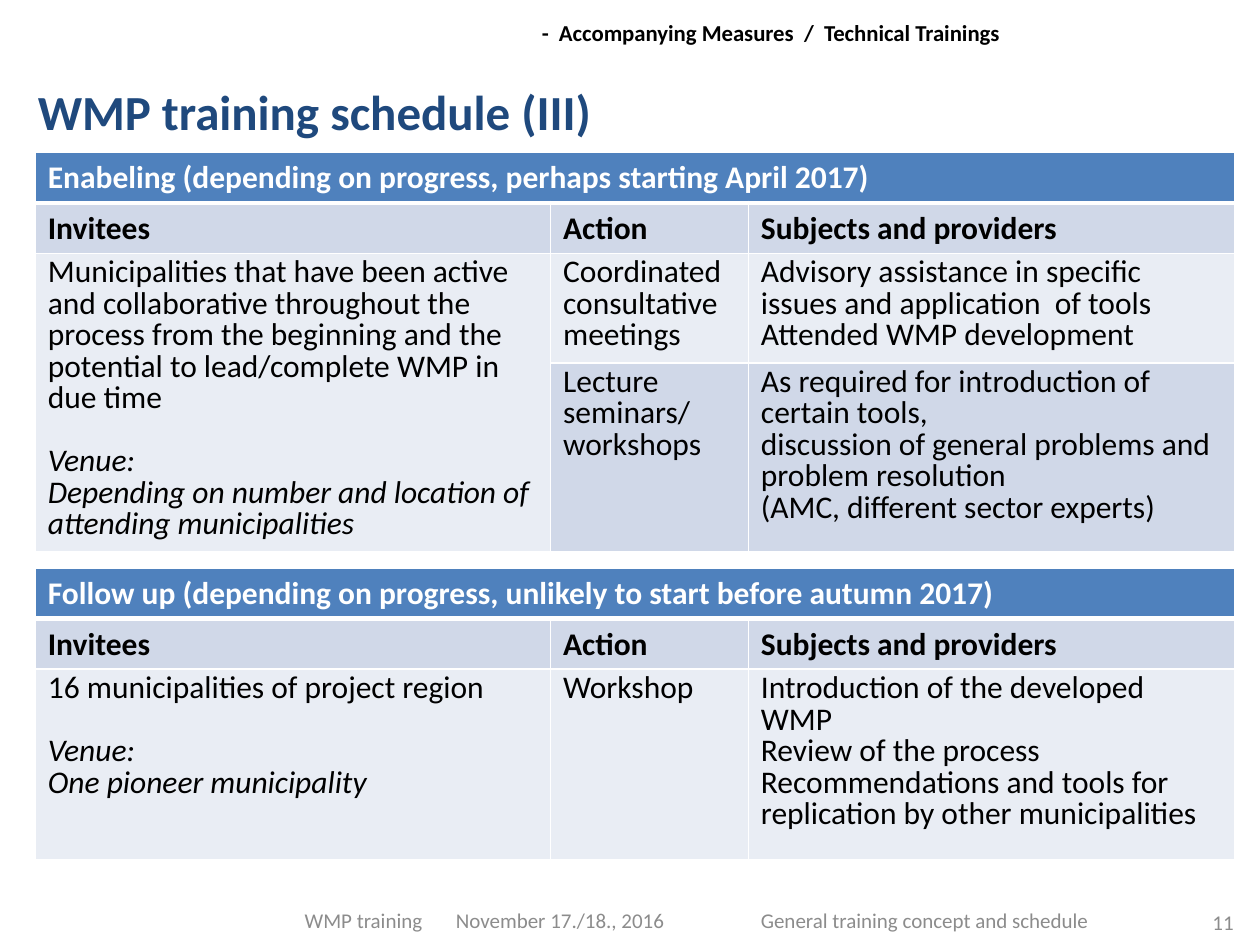
from pptx import Presentation
from pptx.dml.color import RGBColor
from pptx.enum.shapes import MSO_SHAPE
from pptx.enum.text import MSO_ANCHOR, MSO_AUTO_SIZE, PP_ALIGN
from pptx.oxml.ns import qn
from pptx.util import Inches, Pt
from lxml.etree import SubElement

WHITE = RGBColor(0xFF, 0xFF, 0xFF)
BLACK = RGBColor(0, 0, 0)
NAVY = RGBColor(0x1F, 0x49, 0x7D)
BLUE = RGBColor(0x4F, 0x81, 0xBD)
BAND_DARK = RGBColor(0xD0, 0xD8, 0xE8)
BAND_LIGHT = RGBColor(0xE9, 0xED, 0xF4)
GREY = RGBColor(0x8C, 0x8C, 0x8C)
FONT = "Calibri"

SECTION = "-  Accompanying Measures  /  Technical Trainings"
TITLE = "WMP training schedule (III)"
VENUE = "Venue:"
COLUMN_HEADS = ["Invitees", "Action", "Subjects and providers"]

# Each body cell is a list of paragraphs; those from VENUE on are italic.
ENABLING = {
    "heading": "Enabeling (depending on progress, perhaps starting April 2017)",
    "top": 1.21,
    "row_heights": [0.4, 0.4, 0.87, 1.5],
    "body": [
        [["Municipalities that have been active and collaborative throughout the process "
          "from the beginning and the potential to lead/complete WMP in due time",
          VENUE, "Depending on number and location of attending municipalities"],
         ["Coordinated consultative meetings"],
         ["Advisory assistance in specific issues and application  of tools",
          "Attended WMP development"]],
        [[],
         ["Lecture seminars/\vworkshops"],
         ["As required for introduction of certain tools,",
          "discussion of general problems and problem resolution",
          "(AMC, different sector experts)"]],
    ],
}
FOLLOW_UP = {
    "heading": "Follow up (depending on progress, unlikely to start before autumn 2017)",
    "top": 4.51,
    "row_heights": [0.4, 0.4, 1.51],
    "body": [
        [["16 municipalities of project region", VENUE, "One pioneer municipality"],
         ["Workshop"],
         ["Introduction of the developed WMP", "Review of the process",
          "Recommendations and tools for replication by other municipalities"]],
    ],
}
TABLE_LEFT = 0.28
COLUMN_WIDTHS = [4.09, 1.57, 3.86]

# text, (left, top, width, height), alignment
FOOTERS = [
    ("General training concept and schedule", (5.94, 7.1, 3.31, 0.4), PP_ALIGN.LEFT),
    ("WMP training\tNovember 17./18., 2016", (2.32, 7.1, 3.07, 0.4), PP_ALIGN.LEFT),
    ("11", (9.02, 7.12, 0.87, 0.4), PP_ALIGN.RIGHT),
]
FOOTER_TAB = 1.2


def inches(lengths):
    return [Inches(length) for length in lengths]


def style_run(run, size, color, bold=False, italic=False):
    font = run.font
    font.name, font.size, font.bold, font.italic = FONT, Pt(size), bold, italic
    font.color.rgb = color


def style_text(paragraph, *args, **kwargs):
    for run in paragraph.runs:
        style_run(run, *args, **kwargs)


def add_borders(cell, top=1, bottom=1):
    """Draw white cell borders; top and bottom widths are in points."""
    properties = cell._tc.get_or_add_tcPr()
    for side, width in (("L", 1), ("R", 1), ("T", top), ("B", bottom)):
        line = SubElement(properties, qn(f"a:ln{side}"), w=str(Pt(width)))
        fill = SubElement(line, qn("a:solidFill"))
        SubElement(fill, qn("a:srgbClr"), val=str(WHITE))


def fill_cell(cell, color):
    cell.fill.solid()
    cell.fill.fore_color.rgb = color


def write_body(cell, lines):
    cell.text_frame.text = "\n".join(lines)
    italic = False
    for paragraph, line in zip(cell.text_frame.paragraphs, lines):
        paragraph.line_spacing = Pt(18)
        if line == VENUE:
            italic = True
            paragraph.space_before = Pt(18)
        style_text(paragraph, 18, BLACK, italic=italic)


def add_schedule(slide, schedule):
    heights = schedule["row_heights"]
    frame = slide.shapes.add_table(
        len(heights), len(COLUMN_WIDTHS),
        *inches((TABLE_LEFT, schedule["top"], sum(COLUMN_WIDTHS), sum(heights))))
    table = frame.table
    for column, width in zip(table.columns, COLUMN_WIDTHS):
        column.width = Inches(width)
    for row, height in zip(table.rows, heights):
        row.height = Inches(height)

    last = len(COLUMN_WIDTHS) - 1
    table.cell(0, 0).merge(table.cell(0, last))
    if len(schedule["body"]) > 1:
        table.cell(2, 0).merge(table.cell(len(heights) - 1, 0))

    for r, row in enumerate(table.rows):
        for cell in row.cells:
            add_borders(cell, top=3 if r == 1 else 1, bottom=3 if r == 0 else 1)
            fill_cell(cell, BLUE if r == 0 else BAND_DARK if r % 2 else BAND_LIGHT)

    heading = table.cell(0, 0).text_frame
    heading.text = schedule["heading"]
    style_text(heading.paragraphs[0], 18, WHITE, bold=True)
    for c, head in enumerate(COLUMN_HEADS):
        frame = table.cell(1, c).text_frame
        frame.text = head
        style_text(frame.paragraphs[0], 18, BLACK, bold=True)
    for r, row in enumerate(schedule["body"], start=2):
        for c, lines in enumerate(row):
            if lines:
                write_body(table.cell(r, c), lines)


def add_section(slide):
    box = slide.shapes.add_shape(MSO_SHAPE.RECTANGLE, *inches((4.22, 0.11, 3.98, 0.31)))
    box.shadow.inherit = False
    box.fill.solid()
    box.fill.fore_color.rgb = WHITE
    box.line.fill.background()
    frame = box.text_frame
    frame.margin_left = Inches(0.08)
    frame.margin_right = frame.margin_top = frame.margin_bottom = Inches(0.04)
    frame.vertical_anchor = MSO_ANCHOR.TOP
    frame.text = SECTION
    frame.paragraphs[0].alignment = PP_ALIGN.LEFT
    style_text(frame.paragraphs[0], 13, BLACK, bold=True)


def add_footer(slide, text, place, alignment):
    frame = slide.shapes.add_textbox(*inches(place)).text_frame
    frame.word_wrap = True
    frame.vertical_anchor = MSO_ANCHOR.MIDDLE
    frame.text = text
    paragraph = frame.paragraphs[0]
    paragraph.alignment = alignment
    if "\t" in text:
        tabs = SubElement(paragraph._p.get_or_add_pPr(), qn("a:tabLst"))
        SubElement(tabs, qn("a:tab"), pos=str(Inches(FOOTER_TAB)), algn="l")
    style_text(paragraph, 12, GREY)


def set_title(slide):
    title = slide.shapes.title
    title.left, title.top, title.width, title.height = inches((0.2, 0.6, 9.69, 0.53))
    frame = title.text_frame
    frame.text = TITLE
    frame.auto_size = MSO_AUTO_SIZE.NONE
    frame.vertical_anchor = MSO_ANCHOR.TOP
    frame.paragraphs[0].alignment = PP_ALIGN.LEFT
    style_text(frame.paragraphs[0], 28, NAVY, bold=True)


def main():
    deck = Presentation()
    deck.slide_width, deck.slide_height = inches((10, 7.5))
    slide = deck.slides.add_slide(deck.slide_layouts[5])
    set_title(slide)
    add_section(slide)
    for footer in FOOTERS:
        add_footer(slide, *footer)
    for schedule in (ENABLING, FOLLOW_UP):
        add_schedule(slide, schedule)
    deck.save("out.pptx")


if __name__ == "__main__":
    main()
